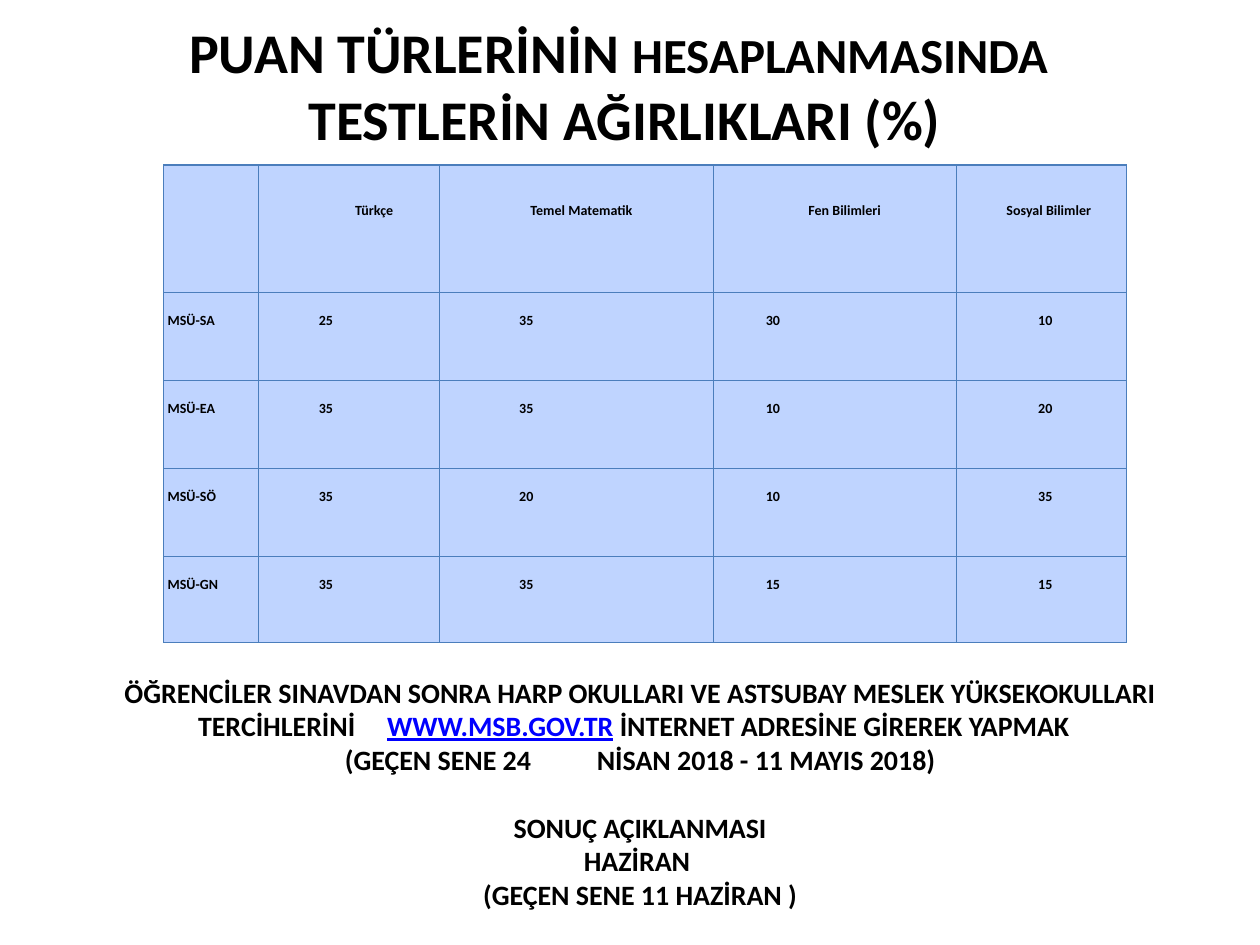
import pptx
import pptx.dml.color
import pptx.enum.text
import pptx.oxml
import pptx.oxml.ns
import pptx.util

Pt = pptx.util.Pt
ALIGN = pptx.enum.text.PP_ALIGN
ANCHOR = pptx.enum.text.MSO_ANCHOR
FONT = "Calibri"
COLORS = {"text": "000000", "link": "0000FF", "cell": "BFD4FF", "border": "4B7EBC"}

HEADERS = ["", "Türkçe", "Temel Matematik", "Fen Bilimleri", "Sosyal Bilimler"]
WEIGHTS = [
    ["MSÜ-SA", "25", "35", "30", "10"],
    ["MSÜ-EA", "35", "35", "10", "20"],
    ["MSÜ-SÖ", "35", "20", "10", "35"],
    ["MSÜ-GN", "35", "35", "15", "15"],
]
COL_WIDTHS = [54, 103.7, 156.2, 139, 97.2]
ROW_HEIGHTS = [72.7, 50.4, 50.4, 50.4, 49]
HEADER_INDENTS = [0, 28.8, 5.8, 11.5, 8.6]
BODY_INDENTS = [2.2, 34.6, 45.4, 30.2, 46.8]


def rgb(name):
    return pptx.dml.color.RGBColor.from_string(COLORS[name])


def style_paragraph(p, size, align):
    p.alignment = align
    p.font.name = FONT
    p.font.size = Pt(size)
    p.font.bold = True
    p.font.color.rgb = rgb("text")


def add_run(p, text):
    r = p.add_run()
    r.text = text
    return r


def add_title(s):
    sp = s.shapes.title
    sp.left, sp.top, sp.width, sp.height = Pt(33.8), Pt(0), Pt(646.6), Pt(136)
    tf = sp.text_frame
    tf.vertical_anchor = ANCHOR.MIDDLE
    tf.margin_bottom = Pt(42.6)
    p = tf.paragraphs[0]
    style_paragraph(p, 32, ALIGN.CENTER)
    add_run(p, "PUAN TÜRLERİNİN ")
    add_run(p, "HESAPLANMASINDA").font.size = Pt(28)
    add_run(p, " ")
    p.add_line_break()
    add_run(p, "TESTLERİN AĞIRLIKLARI (%)")


def set_borders(cell):
    tcPr = cell._tc.get_or_add_tcPr()
    for i, side in enumerate(("lnL", "lnR", "lnT", "lnB")):
        tcPr.insert(i, pptx.oxml.parse_xml(
            f'<a:{side} {pptx.oxml.ns.nsdecls("a")} w="{Pt(0.75)}"><a:solidFill>'
            f'<a:srgbClr val="{COLORS["border"]}"/></a:solidFill></a:{side}>'))


def fill_cell(cell, text, indent, top, line, align):
    cell.fill.solid()
    cell.fill.fore_color.rgb = rgb("cell")
    set_borders(cell)
    cell.margin_left, cell.margin_top = Pt(indent), Pt(top)
    cell.margin_right = cell.margin_bottom = Pt(0)
    p = cell.text_frame.paragraphs[0]
    p.line_spacing = Pt(line)
    style_paragraph(p, 8, align)
    if text:
        add_run(p, text)


def add_weights_table(s):
    rows = [HEADERS] + WEIGHTS
    frame = s.shapes.add_table(len(rows), len(HEADERS), Pt(93.6), Pt(94.3),
                               Pt(sum(COL_WIDTHS)), Pt(sum(ROW_HEIGHTS)))
    table = frame.table
    table.first_row = table.horz_banding = False
    for col, width in zip(table.columns, COL_WIDTHS):
        col.width = Pt(width)
    for i, (values, height) in enumerate(zip(rows, ROW_HEIGHTS)):
        table.rows[i].height = Pt(height)
        if i == 0:
            indents, top, line, align = HEADER_INDENTS, 20.6, 10.3, ALIGN.CENTER
        else:
            indents, top, line, align = BODY_INDENTS, 10.5, 10.5, ALIGN.JUSTIFY
        for j, (text, indent) in enumerate(zip(values, indents)):
            fill_cell(table.cell(i, j), text, indent, top, line, align)


def add_notice(s):
    tf = s.shapes.add_textbox(Pt(28.1), Pt(382.3), Pt(675.4), Pt(181.4)).text_frame
    tf.word_wrap = True
    p = tf.paragraphs[0]
    style_paragraph(p, 16, ALIGN.CENTER)
    add_run(p, "ÖĞRENCİLER SINAVDAN SONRA HARP OKULLARI VE ASTSUBAY MESLEK "
               "YÜKSEKOKULLARI TERCİHLERİNİ \t")
    address = add_run(p, "WWW.MSB.GOV.TR")
    address.font.color.rgb = rgb("link")
    address.font.underline = True
    add_run(p, " İNTERNET ADRESİNE GİREREK YAPMAK  ")
    for text, gap in [("(GEÇEN SENE 24 \tNİSAN 2018 - 11 MAYIS 2018)", 0),
                      ("SONUÇ AÇIKLANMASI", 19.5),
                      ("HAZİRAN ", 0),
                      ("(GEÇEN SENE 11 HAZİRAN )", 0)]:
        p = tf.add_paragraph()
        style_paragraph(p, 16, ALIGN.CENTER)
        p.space_before = Pt(gap)
        add_run(p, text)


def main():
    prs = pptx.Presentation()
    prs.slide_width, prs.slide_height = Pt(720), Pt(540)
    s = prs.slides.add_slide(prs.slide_layouts[5])
    add_title(s)
    add_weights_table(s)
    add_notice(s)
    prs.save("out.pptx")


if __name__ == "__main__":
    main()
